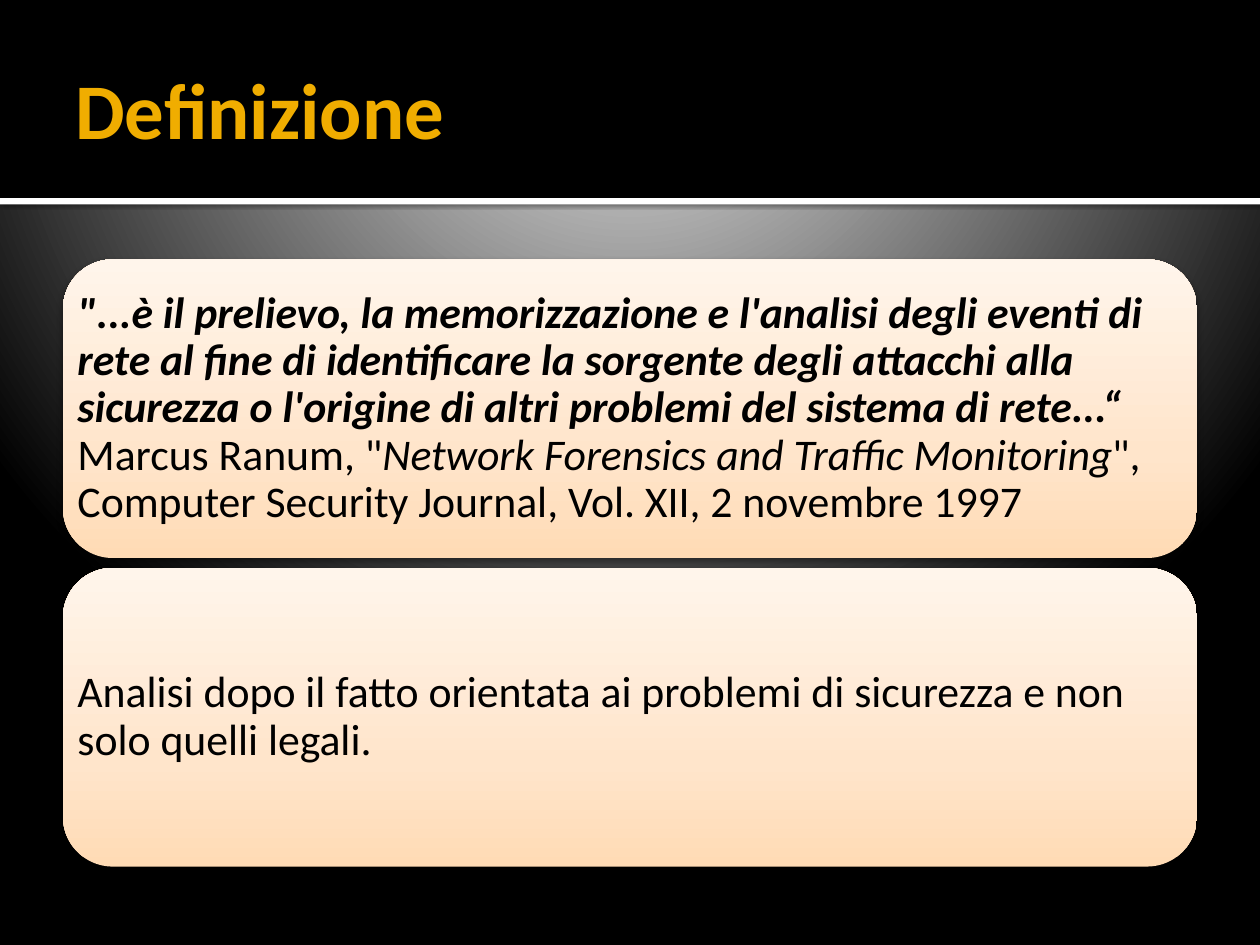
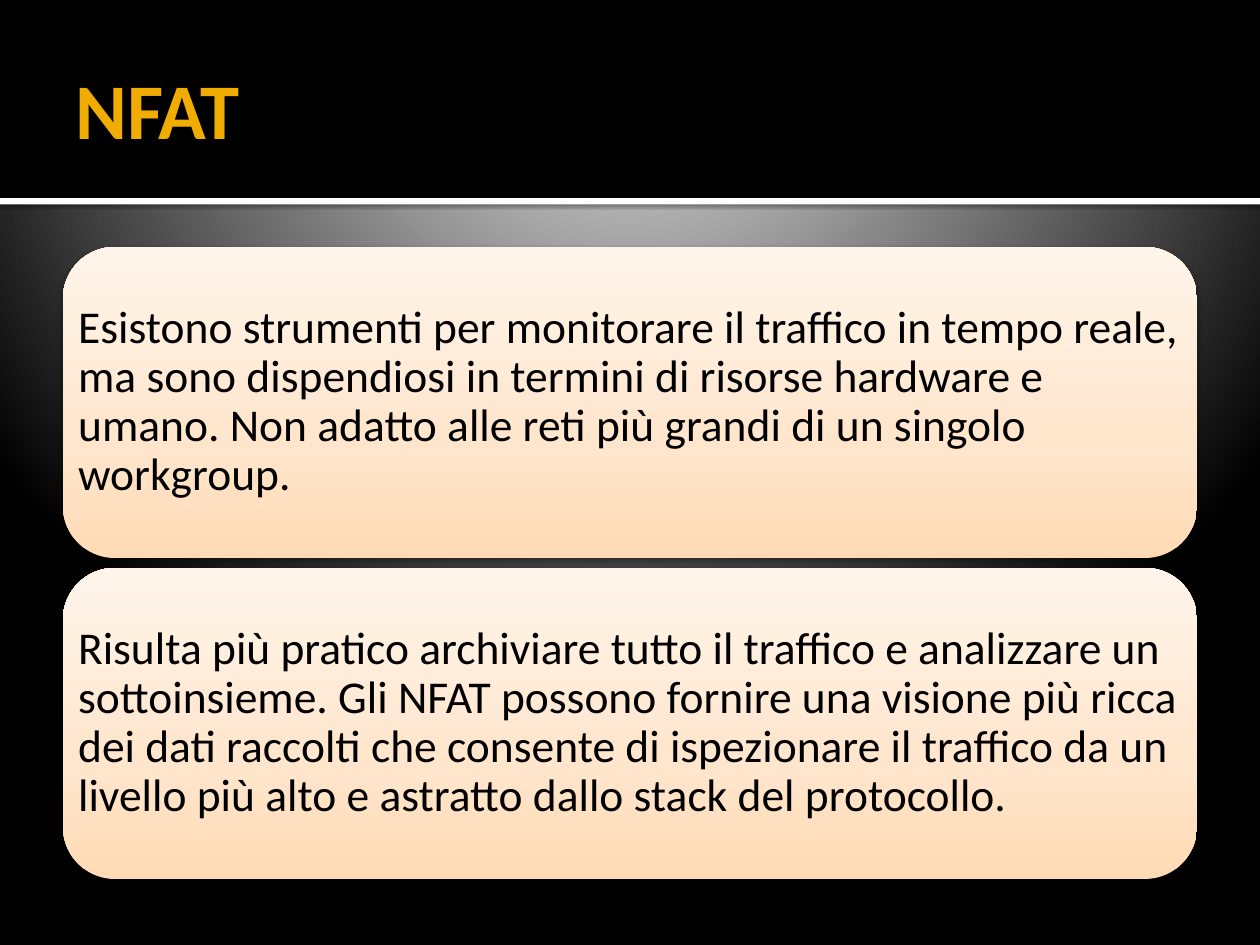
from lxml.etree import SubElement
from pptx import Presentation
from pptx.dml.color import RGBColor
from pptx.enum.shapes import MSO_SHAPE as Shape
from pptx.enum.text import MSO_ANCHOR as Anchor, PP_ALIGN as Align
from pptx.oxml.ns import qn
from pptx.util import Cm, Pt

FONT = "Calibri"
BLACK, WHITE, GOLD = "000000", "FFFFFF", "F0AD00"
BACKDROP = [(0, "C0C0C0"), (12, "C0C0C0"), (20, "BEBEBE"), (100, BLACK)]
PEACH = [(0, "FFDBB5"), (35, "FFE5CB"), (100, "FFF5EB")]
PAGE_WIDTH, PAGE_HEIGHT = 25.4, 19.05
MARGIN = 1.27
BAND_HEIGHT, RULE_HEIGHT = 3.99, 0.13
PANELS_MIDDLE, PANEL_GAP = 11.35, 0.2

DEFINITION = [
    [("\"...è il prelievo, la memorizzazione e l'analisi degli eventi di rete "
      "al fine di identificare la sorgente degli attacchi alla sicurezza o "
      "l'origine di altri problemi del sistema di rete...“ ", True, True),
     ("Marcus Ranum, \"", False, False),
     ("Network Forensics and Traffic Monitoring", False, True),
     ("\", Computer Security Journal, Vol. XII, 2 novembre 1997", False, False)],
    [("Analisi dopo il fatto orientata ai problemi di sicurezza e non solo "
      "quelli legali.", False, False)],
]
NFAT = [
    [("Esistono strumenti per monitorare il traffico in tempo reale, ma sono "
      "dispendiosi in termini di risorse hardware e umano. Non adatto alle "
      "reti più grandi di un singolo workgroup.", False, False)],
    [("Risulta più pratico archiviare tutto il traffico e analizzare un "
      "sottoinsieme. Gli NFAT possono fornire una visione più ricca dei dati "
      "raccolti che consente di ispezionare il traffico da un livello più alto "
      "e astratto dallo stack del protocollo.", False, False)],
]


def color(value):
    """Turn a hex string into a colour."""
    return RGBColor.from_string(value)


def set_gradient(fill, element, stops):
    """Give a fill its colour stops and return its gradient element."""
    fill.gradient()
    gradient = next(element.iter(qn("a:gradFill")))
    for child in list(gradient):
        gradient.remove(child)
    stop_list = SubElement(gradient, qn("a:gsLst"))
    for position, value in stops:
        stop = SubElement(stop_list, qn("a:gs"), pos=str(position * 1000))
        SubElement(stop, qn("a:srgbClr"), val=value)
    return gradient


def add_shadow(shape, opacity, blur, distance):
    """Cast a soft black shadow straight down."""
    shape.shadow.inherit = False
    effects = shape.element.spPr.find(qn("a:effectLst"))
    shadow = SubElement(effects, qn("a:outerShdw"), blurRad=str(Pt(blur)),
                        dist=str(Pt(distance)), dir="5400000", rotWithShape="0")
    shade = SubElement(shadow, qn("a:srgbClr"), val=BLACK)
    SubElement(shade, qn("a:alpha"), val=str(opacity * 1000))


def add_bar(page, top, height, value):
    """Add a plain bar across the whole page."""
    bar = page.shapes.add_shape(Shape.RECTANGLE, 0, Cm(top), Cm(PAGE_WIDTH), Cm(height))
    bar.fill.solid()
    bar.fill.fore_color.rgb = color(value)
    bar.line.fill.background()
    bar.shadow.inherit = False
    return bar


def style_span(span, size, value, bold=False, italic=False):
    """Set the font of one run."""
    font = span.font
    font.name, font.size, font.bold, font.italic = FONT, Pt(size), bold, italic
    font.color.rgb = color(value)


def add_title(page, text):
    """Add the page title inside the top band."""
    box = page.shapes.add_textbox(Cm(MARGIN), Cm(0.43), Cm(PAGE_WIDTH - 2 * MARGIN), Cm(3.48))
    frame = box.text_frame
    frame.word_wrap = True
    frame.vertical_anchor = Anchor.MIDDLE
    frame.text = text
    style_span(frame.paragraphs[0].runs[0], 45, GOLD, bold=True)


def add_panel(page, top, height, parts, size):
    """Add a rounded panel holding one paragraph of styled parts."""
    panel = page.shapes.add_shape(Shape.ROUNDED_RECTANGLE, Cm(MARGIN), Cm(top),
                                  Cm(PAGE_WIDTH - 2 * MARGIN), Cm(height))
    gradient = set_gradient(panel.fill, panel.element, PEACH)
    SubElement(gradient, qn("a:lin"), ang="16200000", scaled="1")
    panel.line.fill.background()
    add_shadow(panel, 38, 3.5, 2)
    frame = panel.text_frame
    frame.word_wrap = True
    frame.vertical_anchor = Anchor.MIDDLE
    frame.margin_left = frame.margin_right = frame.margin_top = frame.margin_bottom = 0
    para = frame.paragraphs[0]
    para.alignment = Align.LEFT
    para.line_spacing = 0.9
    for text, bold, italic in parts:
        span = para.add_run()
        span.text = text
        style_span(span, size, BLACK, bold, italic)


def add_page(deck, title, panels, height, size):
    """Add a page with its backdrop, title band and stacked panels."""
    page = deck.slides.add_slide(deck.slide_layouts[6])
    gradient = set_gradient(page.background.fill, page.element, BACKDROP)
    circle = SubElement(gradient, qn("a:path"), path="circle")
    SubElement(circle, qn("a:fillToRect"), l="10000", t="-25000", r="10000", b="125000")
    rule = add_bar(page, BAND_HEIGHT, RULE_HEIGHT, WHITE)
    add_shadow(rule, 60, 2.5, 0.8)
    add_bar(page, 0, BAND_HEIGHT, BLACK)
    add_title(page, title)
    step = height + PANEL_GAP
    first_top = PANELS_MIDDLE - (len(panels) * step - PANEL_GAP) / 2
    for index, parts in enumerate(panels):
        add_panel(page, first_top + index * step, height, parts, size)


def main():
    """Build and save the deck."""
    deck = Presentation()
    deck.slide_width, deck.slide_height = Cm(PAGE_WIDTH), Cm(PAGE_HEIGHT)
    add_page(deck, "Definizione", DEFINITION, 6.02, 25)
    add_page(deck, "NFAT", NFAT, 6.27, 26)
    deck.save("out.pptx")


if __name__ == "__main__":
    main()
